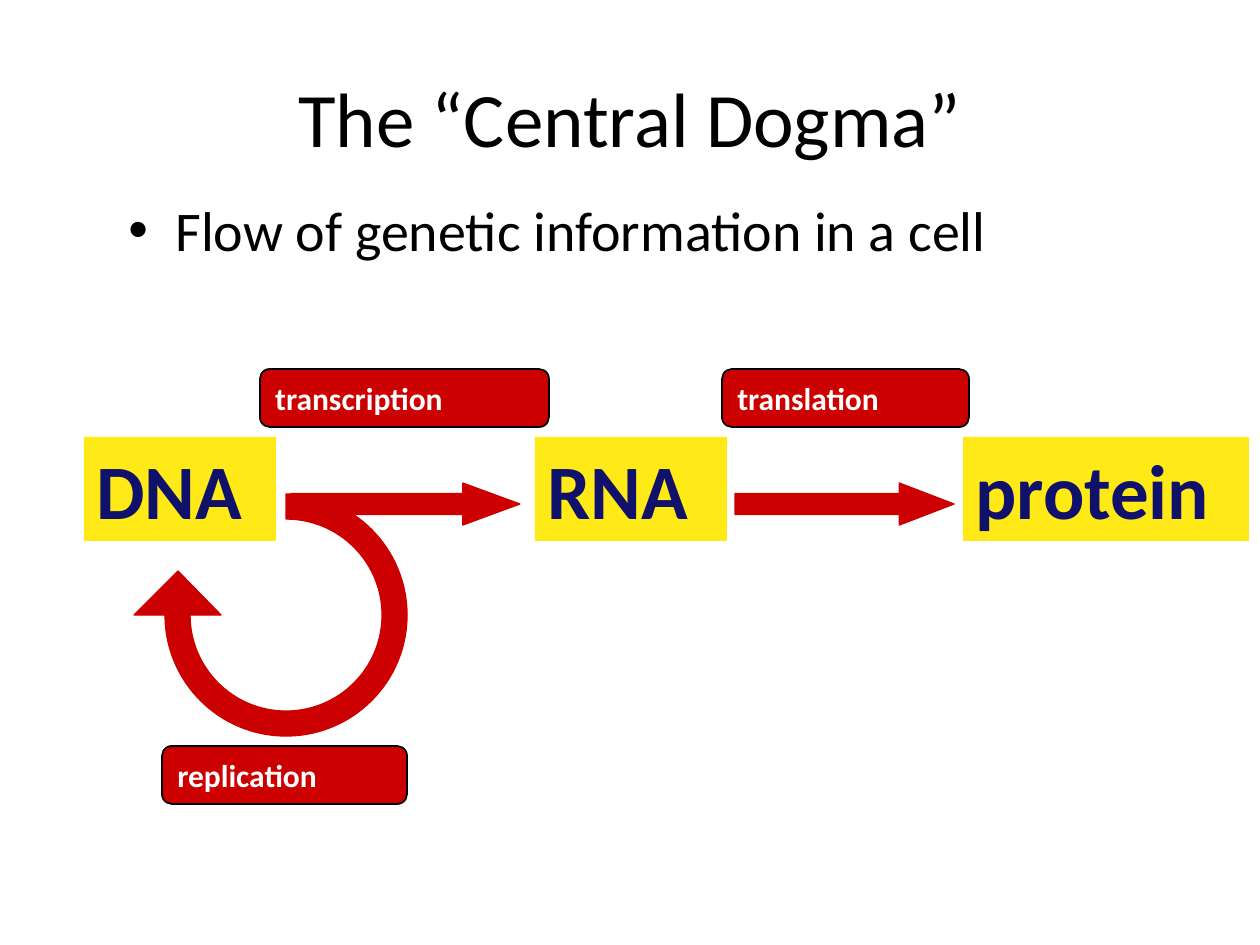
from lxml.etree import SubElement
from pptx import Presentation
from pptx.dml.color import RGBColor
from pptx.enum.shapes import MSO_SHAPE
from pptx.enum.text import MSO_ANCHOR, PP_ALIGN
from pptx.oxml.ns import qn
from pptx.util import Emu, Pt

PX = 914400 / 126
RED, YELLOW, NAVY, WHITE, BLACK = "CC0000", "FFEA18", "0F116A", "FFFFFF", "000000"


def paint(shape, fill, line=None, width=0.75):
    shape.shadow.inherit = False
    shape.fill.solid()
    shape.fill.fore_color.rgb = RGBColor.from_string(fill)
    if line:
        shape.line.color.rgb = RGBColor.from_string(line)
        shape.line.width = Pt(width)
    else:
        shape.line.fill.background()


def write(shape, text, size, color, bold=False, anchor=MSO_ANCHOR.MIDDLE, align=PP_ALIGN.LEFT):
    frame = shape.text_frame
    frame.word_wrap = True
    frame.vertical_anchor = anchor
    paragraph = frame.paragraphs[0]
    paragraph.alignment = align
    run = paragraph.add_run()
    run.text = text
    run.font.name = "Calibri"
    run.font.size = Pt(size)
    run.font.bold = bold
    run.font.color.rgb = RGBColor.from_string(color)
    return paragraph


presentation = Presentation()
presentation.slide_width = Emu(round(1260 * PX))
presentation.slide_height = Emu(round(945 * PX))
slide = presentation.slides.add_slide(presentation.slide_layouts[6])
shapes = slide.shapes

# Title and bullet
title = shapes.add_textbox(*[Emu(round(n * PX)) for n in (63, 38, 1134, 157)])
write(title, "The “Central Dogma”", 44, BLACK, align=PP_ALIGN.CENTER)

body = shapes.add_textbox(*[Emu(round(n * PX)) for n in (116, 189, 1071, 147)])
paragraph = write(body, "Flow of genetic information in a cell", 32, BLACK, anchor=MSO_ANCHOR.TOP)
properties = paragraph._p.get_or_add_pPr()
indent = round(47 * PX)
properties.set("marL", str(indent))
properties.set("indent", str(-indent))
SubElement(properties, qn("a:buFont")).set("typeface", "Arial")
SubElement(properties, qn("a:buChar")).set("char", "•")

# Molecules
for text, left, width in (("DNA", 84, 192), ("RNA", 535, 192), ("protein", 963, 286)):
    box = [Emu(round(n * PX)) for n in (left, 437, width, 104)]
    molecule = shapes.add_shape(MSO_SHAPE.RECTANGLE, *box)
    paint(molecule, YELLOW)
    write(molecule, text, 44, NAVY, bold=True)

# Replication loop: three quarters of a ring with an arrowhead, drawn half a turn round
center_x, center_y, inner, outer = 286, 615, 96, 121
turns = [(1, 0), (0, -1), (-1, 0), (0, 1)]
points = [
    (center_x + radius * x, center_y + radius * y)
    for radius, sweep in ((inner, turns), (outer, turns[::-1]))
    for x, y in sweep
]
points += [(438, 615), (394, 659), (351, 615)]
points = [(round(x * PX), round(y * PX)) for x, y in points]
builder = shapes.build_freeform(*points[0])
builder.add_line_segments(points[1:], close=True)
loop = builder.convert_to_shape()
paint(loop, RED, RED)

# The frame holds the ring alone; the arrowhead reaches past it
loop.width = loop.height
outline = next(loop._element.iter(qn("a:path")))
outline.set("w", str(loop.width))
outline.set("h", str(loop.height))
loop.rotation = 180

# Bend each side between neighbouring ring points into a quarter circle
bend = 0.5523
segments = outline.findall(qn("a:lnTo"))
for index in (1, 2, 3, 5, 6, 7):
    start, end = points[index - 1], points[index]
    middle = (round(center_x * PX), round(center_y * PX))
    first = [s + bend * (e - m) for s, e, m in zip(start, end, middle)]
    second = [e + bend * (s - m) for s, e, m in zip(start, end, middle)]
    curve = segments[index - 1]
    curve.tag = qn("a:cubicBezTo")
    for position, (x, y) in enumerate((first, second)):
        control = SubElement(curve, qn("a:pt"))
        control.set("x", str(round(x - loop.left)))
        control.set("y", str(round(y - loop.top)))
        curve.insert(position, control)

# Straight arrows
for left, width, head in ((291, 229, 1.36), (735, 219, 1.3)):
    box = [Emu(round(n * PX)) for n in (left, 483, width, 42)]
    arrow = shapes.add_shape(MSO_SHAPE.RIGHT_ARROW, *box)
    arrow.adjustments[0] = 0.5
    arrow.adjustments[1] = head
    paint(arrow, RED, RED)

# Process labels
for text, left, top, width in (
    ("transcription", 260, 369, 289),
    ("translation", 722, 369, 247),
    ("replication", 162, 746, 245),
):
    box = [Emu(round(n * PX)) for n in (left, top, width, 58)]
    label = shapes.add_shape(MSO_SHAPE.ROUNDED_RECTANGLE, *box)
    label.adjustments[0] = 0.17
    paint(label, RED, BLACK, 1)
    write(label, text, 18, WHITE, bold=True)
    label.text_frame.margin_top = label.text_frame.margin_bottom = 0

presentation.save("out.pptx")
